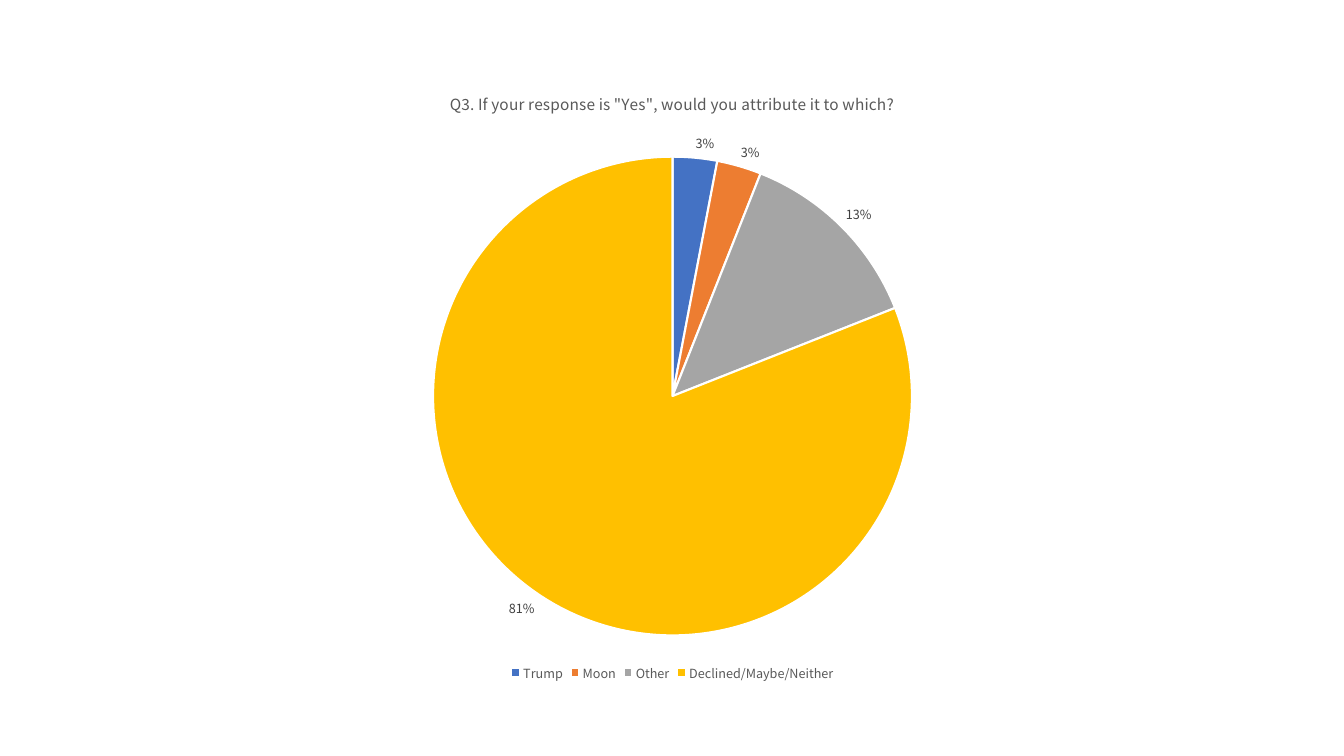
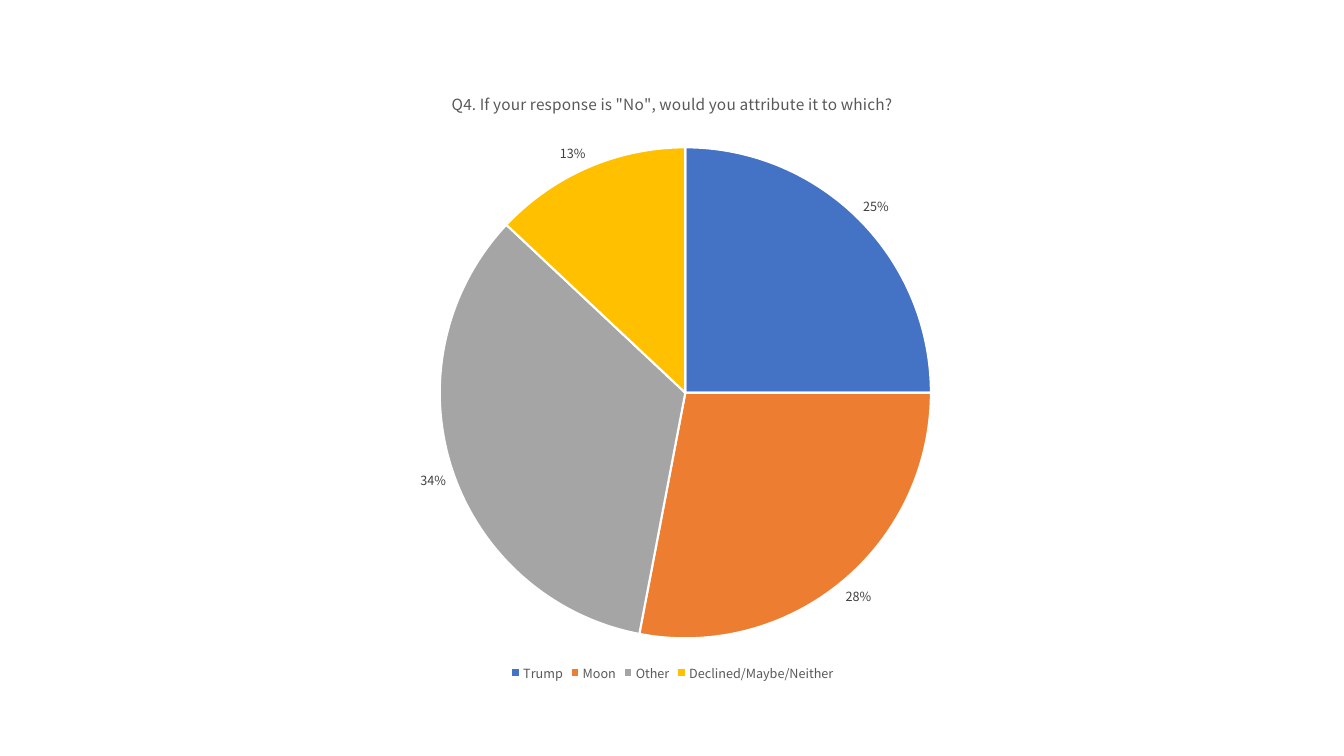
import pptx
import pptx.chart.data
import pptx.dml.color
import pptx.enum.chart
import pptx.util
from dataclasses import dataclass

Inches = pptx.util.Inches


@dataclass(frozen=True)
class Theme:
    font: str = "Noto Sans CJK KR"
    text: str = "595959"
    label: str = "404040"
    base: str = "000000"
    border: str = "FFFFFF"
    slices: tuple = ("4472C4", "ED7D31", "A5A5A5", "FFC000")
    title_size: float = 11
    base_size: float = 10
    small_size: float = 9
    border_width: float = 1.5


THEME = Theme()
CHART_BOX = (Inches(2.14), Inches(0.7), Inches(9.06), Inches(6.1))
ANSWERS = ("Trump", "Moon", "Other", "Declined/Maybe/Neither")
QUESTIONS = (
    ('Q3. If your response is "Yes", would you attribute it to which?',
     (0.03, 0.03, 0.13, 0.81)),
    ('Q4. If your response is "No", would you attribute it to which?',
     (0.25, 0.28, 0.34, 0.13)),
)


def rgb(value):
    return pptx.dml.color.RGBColor.from_string(value)


def style_font(font, size, color):
    font.name = THEME.font
    font.size = pptx.util.Pt(size)
    font.bold = False
    font.color.rgb = rgb(color)


def style_title(chart, question):
    chart.has_title = True
    tf = chart.chart_title.text_frame
    tf.text = question
    style_font(tf.paragraphs[0].runs[0].font, THEME.title_size, THEME.text)
    chart.chart_title.include_in_layout = False


def style_legend(chart):
    chart.has_legend = True
    legend = chart.legend
    legend.position = pptx.enum.chart.XL_LEGEND_POSITION.BOTTOM
    legend.include_in_layout = False
    style_font(legend.font, THEME.small_size, THEME.text)


def style_slices(plot):
    plot.vary_by_categories = True
    for i, color in enumerate(THEME.slices):
        fmt = plot.series[0].points[i].format
        fmt.fill.solid()
        fmt.fill.fore_color.rgb = rgb(color)
        fmt.line.color.rgb = rgb(THEME.border)
        fmt.line.width = pptx.util.Pt(THEME.border_width)


def style_labels(series):
    labels = series.data_labels
    labels.show_value = True
    labels.show_percentage = False
    labels.number_format = "0%"
    labels.number_format_is_linked = False
    labels.position = pptx.enum.chart.XL_LABEL_POSITION.OUTSIDE_END
    style_font(labels.font, THEME.small_size, THEME.label)


def add_pie(s, box, question, shares):
    data = pptx.chart.data.CategoryChartData(number_format="0%")
    data.categories = ANSWERS
    data.add_series(question, shares)
    chart = s.shapes.add_chart(
        pptx.enum.chart.XL_CHART_TYPE.PIE, *box, data).chart
    style_font(chart.font, THEME.base_size, THEME.base)
    style_title(chart, question)
    style_legend(chart)
    style_slices(chart.plots[0])
    style_labels(chart.plots[0].series[0])


def main():
    prs = pptx.Presentation()
    prs.slide_width = Inches(13.33)
    prs.slide_height = Inches(7.5)
    for question, shares in QUESTIONS:
        s = prs.slides.add_slide(prs.slide_layouts[6])
        add_pie(s, CHART_BOX, question, shares)
    prs.save("out.pptx")


if __name__ == "__main__":
    main()
